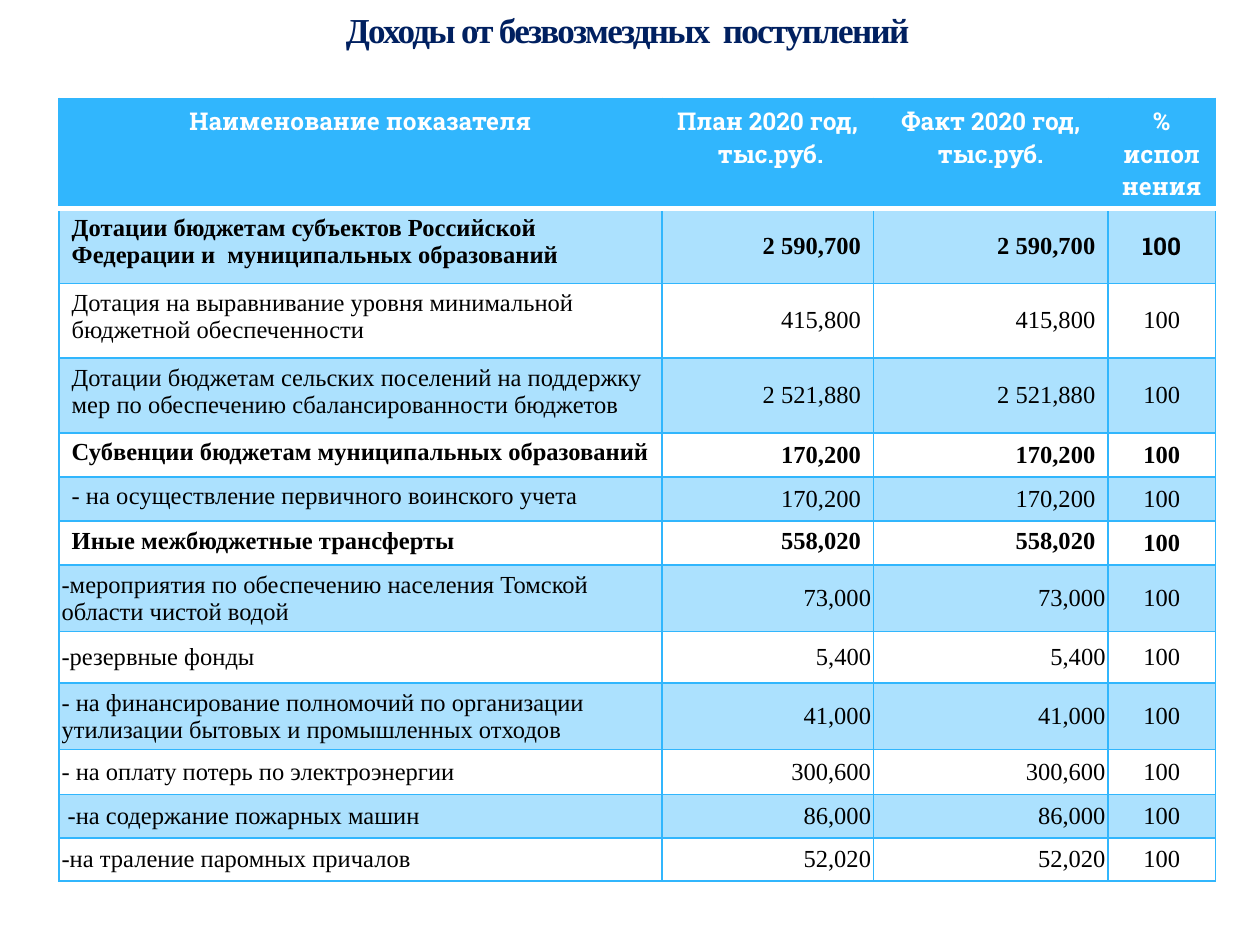
from lxml.etree import SubElement
from pptx import Presentation
from pptx.dml.color import RGBColor
from pptx.enum.text import MSO_ANCHOR as Anchor, MSO_AUTO_SIZE as AutoSize, PP_ALIGN as Align
from pptx.oxml import parse_xml
from pptx.oxml.ns import nsdecls, qn
from pptx.util import Pt

COLORS = {"sky": "31B6FD", "white": "FFFFFF", "black": "000000",
          "navy": "002060", "outline": "AFCCDE"}
SERIF, SLAB = "Times New Roman", "Roboto Slab"

COLUMN_WIDTHS = [344.4, 121, 134, 61.4]
HEADINGS = ["Наименование показателя", "План 2020 год,  тыс.руб.",
            "Факт 2020 год, тыс.руб.", "% исполнения"]
HEADING_HEIGHT = 60.5
# Height, indicator, amount (plan and actual are equal)
MAIN_INCOME = [
    (42.7, "Дотации бюджетам субъектов Российской Федерации и  муниципальных образований", "2 590,700"),
    (42.7, "Дотация на выравнивание уровня минимальной бюджетной обеспеченности", "415,800"),
    (42.7, "Дотации бюджетам сельских поселений на поддержку мер по обеспечению "
           "сбалансированности бюджетов", "2 521,880"),
    (25.2, "Субвенции бюджетам муниципальных образований", "170,200"),
    (25.2, "- на осуществление первичного воинского учета", "170,200"),
    (25.2, "Иные межбюджетные трансферты", "558,020"),
]
TRANSFERS = [
    (38, "-мероприятия по обеспечению населения Томской области чистой водой", "73,000"),
    (29.5, "-резервные фонды", "5,400"),
    (38, "- на финансирование полномочий по организации утилизации бытовых "
         "и промышленных отходов", "41,000"),
    (25.6, "- на оплату потерь по электроэнергии", "300,600"),
    (25, " -на содержание пожарных машин", "86,000"),
    (24.5, "-на траление паромных причалов", "52,020"),
]
INCOME = MAIN_INCOME + TRANSFERS
GROUP_ROWS = {1, 4, 6}
OTHER_TRANSFERS_ROW = 6


def write(frame, text, size=14, font=SERIF, color="black", bold=False, align=Align.LEFT):
    paragraph = frame.paragraphs[0]
    paragraph.alignment = align
    run = paragraph.add_run()
    run.text = text
    run.font.size = Pt(size)
    run.font.name = font
    run.font.bold = bold
    run.font.color.rgb = RGBColor.from_string(COLORS[color])
    return run


class SlideBuilder:
    def __init__(self, slide):
        self.slide = slide

    def title(self, text, left, top, width, height):
        heading = self.slide.shapes.title
        heading.left, heading.top = Pt(left), Pt(top)
        heading.width, heading.height = Pt(width), Pt(height)
        frame = heading.text_frame
        frame.word_wrap = True
        frame.auto_size = AutoSize.NONE
        frame.vertical_anchor = Anchor.MIDDLE
        run = write(frame, text, size=20, color="navy", bold=True, align=Align.CENTER)
        properties = run.font._element
        properties.set("spc", "-100")
        properties.insert(0, parse_xml(
            f'<a:ln {nsdecls("a")} w="3175"><a:solidFill><a:srgbClr val="{COLORS["outline"]}">'
            '<a:alpha val="25000"/></a:srgbClr></a:solidFill><a:prstDash val="solid"/></a:ln>'))

    def table(self, left, top, widths, heights):
        frame = self.slide.shapes.add_table(len(heights), len(widths), Pt(left), Pt(top),
                                            Pt(sum(widths)), Pt(sum(heights)))
        grid = frame.table
        grid.horz_banding = False
        for column, width in zip(grid.columns, widths):
            column.width = Pt(width)
        for row, height in zip(grid.rows, heights):
            row.height = Pt(height)
        return grid

    def cell(self, cell, text, fill_alpha=100, anchor=Anchor.TOP, inset=None,
             white_edge=None, **text_format):
        """Fill one cell; white_edge names the side ("T" or "B") with a thick white rule."""
        cell.vertical_anchor = anchor
        if inset is not None:
            cell.margin_left = cell.margin_right = Pt(inset)
            cell.margin_top = cell.margin_bottom = Pt(inset)
        write(cell.text_frame, text, **text_format)
        if fill_alpha:
            cell.fill.solid()
            cell.fill.fore_color.rgb = RGBColor.from_string(COLORS["sky"])
        else:
            cell.fill.background()
        properties = cell._tc.get_or_add_tcPr()
        if 0 < fill_alpha < 100:
            color = properties.find(f'{qn("a:solidFill")}/{qn("a:srgbClr")}')
            SubElement(color, qn("a:alpha"), val=str(fill_alpha * 1000))
        for index, side in enumerate("LRTB"):
            width, color = (3, "white") if side == white_edge else (1, "sky")
            properties.insert(index, parse_xml(
                f'<a:ln{side} {nsdecls("a")} w="{Pt(width)}"><a:solidFill>'
                f'<a:srgbClr val="{COLORS[color]}"/></a:solidFill></a:ln{side}>'))


def main():
    deck = Presentation()
    deck.slide_width, deck.slide_height = Pt(720), Pt(540)
    builder = SlideBuilder(deck.slides.add_slide(deck.slide_layouts[5]))
    builder.title("Доходы от безвозмездных  поступлений", 82, 0, 553, 34)

    heights = [HEADING_HEIGHT] + [height for height, *_ in INCOME]
    income_table = builder.table(33.8, 56.2, COLUMN_WIDTHS, heights)
    for column, heading in enumerate(HEADINGS):
        builder.cell(income_table.cell(0, column), heading, white_edge="B", font=SLAB,
                     color="white", bold=True, align=Align.CENTER)

    for row, (_, indicator, amount) in enumerate(INCOME, start=1):
        is_transfer = row > len(MAIN_INCOME)
        name_anchor = Anchor.MIDDLE if is_transfer else Anchor.TOP
        amount_anchor = Anchor.TOP if row == OTHER_TRANSFERS_ROW else Anchor.MIDDLE
        values = [
            (indicator, name_anchor, Align.LEFT, SERIF),
            (amount, amount_anchor, Align.RIGHT, SERIF),
            (amount, amount_anchor, Align.RIGHT, SERIF),
            ("100", Anchor.MIDDLE, Align.CENTER, SLAB if row == 1 else SERIF),
        ]
        for column, (text, anchor, align, font) in enumerate(values):
            builder.cell(income_table.cell(row, column), text, anchor=anchor, align=align,
                         font=font, bold=row in GROUP_ROWS,
                         fill_alpha=40 if row % 2 else 0,
                         inset=1.4 if is_transfer else None,
                         white_edge="T" if row == 1 else None)

    deck.save("out.pptx")


if __name__ == "__main__":
    main()
